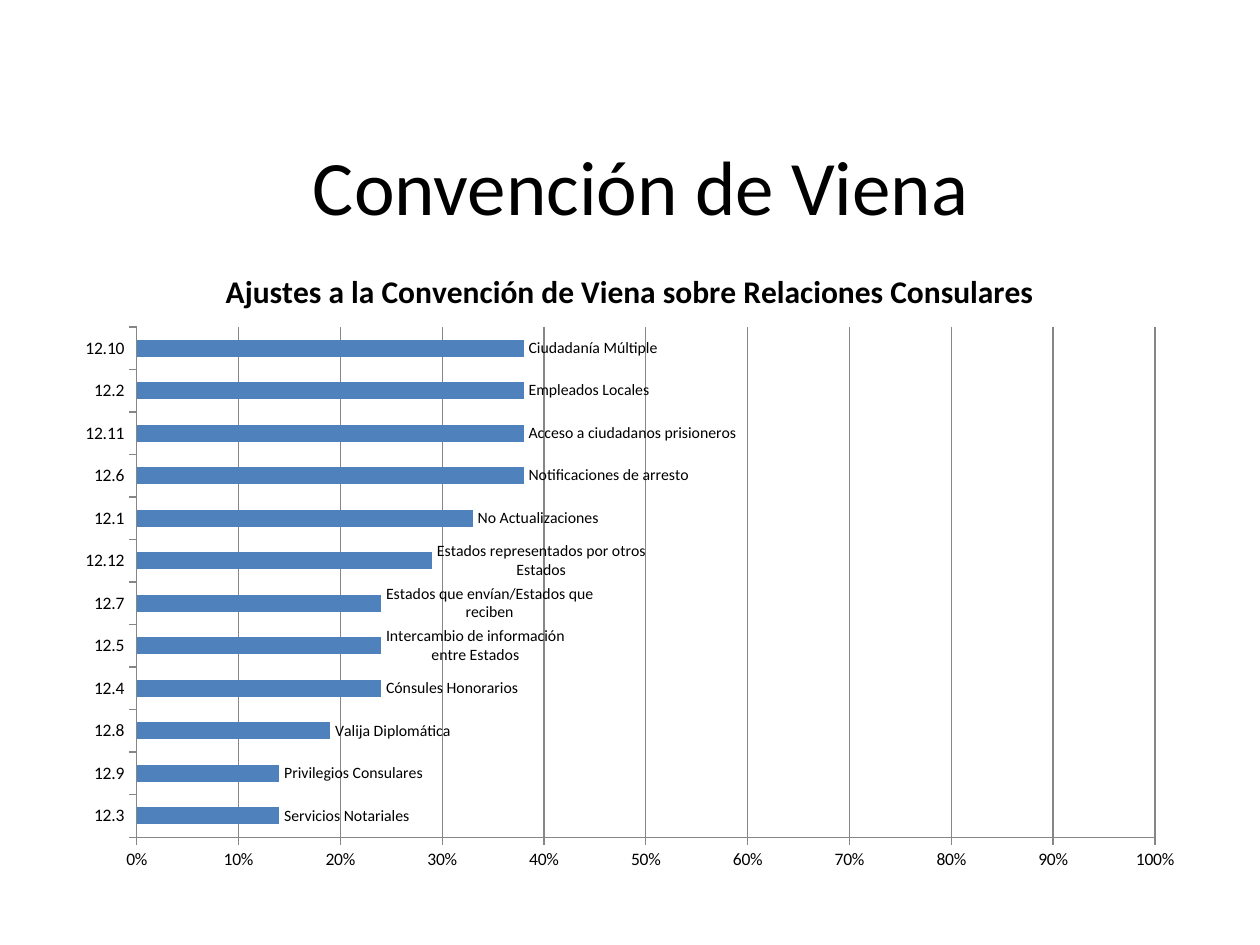
from lxml import etree
from pptx import Presentation
from pptx.chart.data import CategoryChartData
from pptx.dml.color import RGBColor
from pptx.enum.chart import XL_CHART_TYPE, XL_LABEL_POSITION, XL_TICK_MARK
from pptx.enum.text import MSO_ANCHOR, PP_ALIGN
from pptx.oxml.ns import qn
from pptx.util import Pt

EMU_PER_PX = 914400 / 126
FONT = "Calibri"
BLACK, GRAY, BLUE = "000000", "868686", "4F81BD"

# Article, share of states, subject; listed from the bottom bar up
ADJUSTMENTS = [
    ("12.3", 0.14, "Servicios Notariales"),
    ("12.9", 0.14, "Privilegios Consulares"),
    ("12.8", 0.19, "Valija Diplomática"),
    ("12.4", 0.24, "Cónsules Honorarios"),
    ("12.5", 0.24, "Intercambio de información entre Estados"),
    ("12.7", 0.24, "Estados que envían/Estados que reciben"),
    ("12.12", 0.29, "Estados representados por otros Estados"),
    ("12.1", 0.33, "No Actualizaciones"),
    ("12.6", 0.38, "Notificaciones de arresto"),
    ("12.11", 0.38, "Acceso a ciudadanos prisioneros"),
    ("12.2", 0.38, "Empleados Locales"),
    ("12.10", 0.38, "Ciudadanía Múltiple"),
]


def px(length):
    return round(length * EMU_PER_PX)


def rgb(value):
    return RGBColor.from_string(value)


def style_font(font, size, bold=False):
    font.name = FONT
    font.size = Pt(size)
    font.bold = bold
    font.color.rgb = rgb(BLACK)


def style_line(line):
    line.color.rgb = rgb(GRAY)
    line.width = Pt(0.75)


def add_heading(slide, left, top, width, height):
    heading = slide.shapes.title
    heading.left, heading.top = px(left), px(top)
    heading.width, heading.height = px(width), px(height)
    frame = heading.text_frame
    frame.text = "Convención de Viena"
    frame.vertical_anchor = MSO_ANCHOR.MIDDLE
    frame.paragraphs[0].alignment = PP_ALIGN.CENTER
    style_font(frame.paragraphs[0].runs[0].font, 44)


def fix_plot_area(chart, **fractions):
    """Set the inner plot area as fractions of the chart's box."""
    plot_area = chart.element.find(".//" + qn("c:plotArea"))
    for old_layout in plot_area.findall(qn("c:layout")):
        plot_area.remove(old_layout)
    layout = etree.Element(qn("c:layout"))
    manual = etree.SubElement(layout, qn("c:manualLayout"))
    settings = {"layoutTarget": "inner", "xMode": "edge", "yMode": "edge", **fractions}
    for tag, value in settings.items():
        etree.SubElement(manual, qn("c:" + tag)).set("val", str(value))
    plot_area.insert(0, layout)


def style_axes(chart):
    for axis in (chart.category_axis, chart.value_axis):
        axis.major_tick_mark = XL_TICK_MARK.OUTSIDE
        axis.minor_tick_mark = XL_TICK_MARK.NONE
        style_font(axis.tick_labels.font, 10)
        style_line(axis.format.line)
    shares = chart.value_axis
    shares.minimum_scale, shares.maximum_scale, shares.major_unit = 0, 1, 0.1
    shares.tick_labels.number_format = "0%"
    shares.tick_labels.number_format_is_linked = False
    shares.has_major_gridlines = True
    style_line(shares.major_gridlines.format.line)


def label_bars(plot):
    plot.has_data_labels = True
    labels = plot.data_labels
    labels.show_value = True
    labels.number_format = "0%"
    labels.number_format_is_linked = False
    labels.position = XL_LABEL_POSITION.OUTSIDE_END
    style_font(labels.font, 9)
    for point_index, (_, _, subject) in enumerate(ADJUSTMENTS):
        label = plot.series[0].points[point_index].data_label
        label.text_frame.text = subject
        style_font(label.text_frame.paragraphs[0].runs[0].font, 9)
        label.position = XL_LABEL_POSITION.OUTSIDE_END


def add_adjustments_chart(slide, left, top, width, height):
    data = CategoryChartData(number_format="0%")
    data.categories = [article for article, _, _ in ADJUSTMENTS]
    data.add_series("Series 1", [share for _, share, _ in ADJUSTMENTS])
    chart = slide.shapes.add_chart(
        XL_CHART_TYPE.BAR_CLUSTERED, px(left), px(top), px(width), px(height), data
    ).chart
    style_font(chart.font, 10)
    chart.has_legend = False
    chart.has_title = True
    chart.chart_title.include_in_layout = False
    caption = chart.chart_title.text_frame
    caption.text = "Ajustes a la Convención de Viena sobre Relaciones Consulares"
    style_font(caption.paragraphs[0].runs[0].font, 18, bold=True)

    plot = chart.plots[0]
    plot.gap_width = 150
    plot.vary_by_categories = False
    bars = plot.series[0].format.fill
    bars.solid()
    bars.fore_color.rgb = rgb(BLUE)
    style_axes(chart)
    label_bars(plot)
    fix_plot_area(chart, x=0.065, y=0.13, w=0.898, h=0.8)


def main():
    deck = Presentation()
    deck.slide_width, deck.slide_height = px(1260), px(945)
    slide = deck.slides.add_slide(deck.slide_layouts[5])
    add_heading(slide, 74, 106, 1134, 158)
    add_adjustments_chart(slide, 63, 244, 1134, 638)
    deck.save("out.pptx")


if __name__ == "__main__":
    main()
